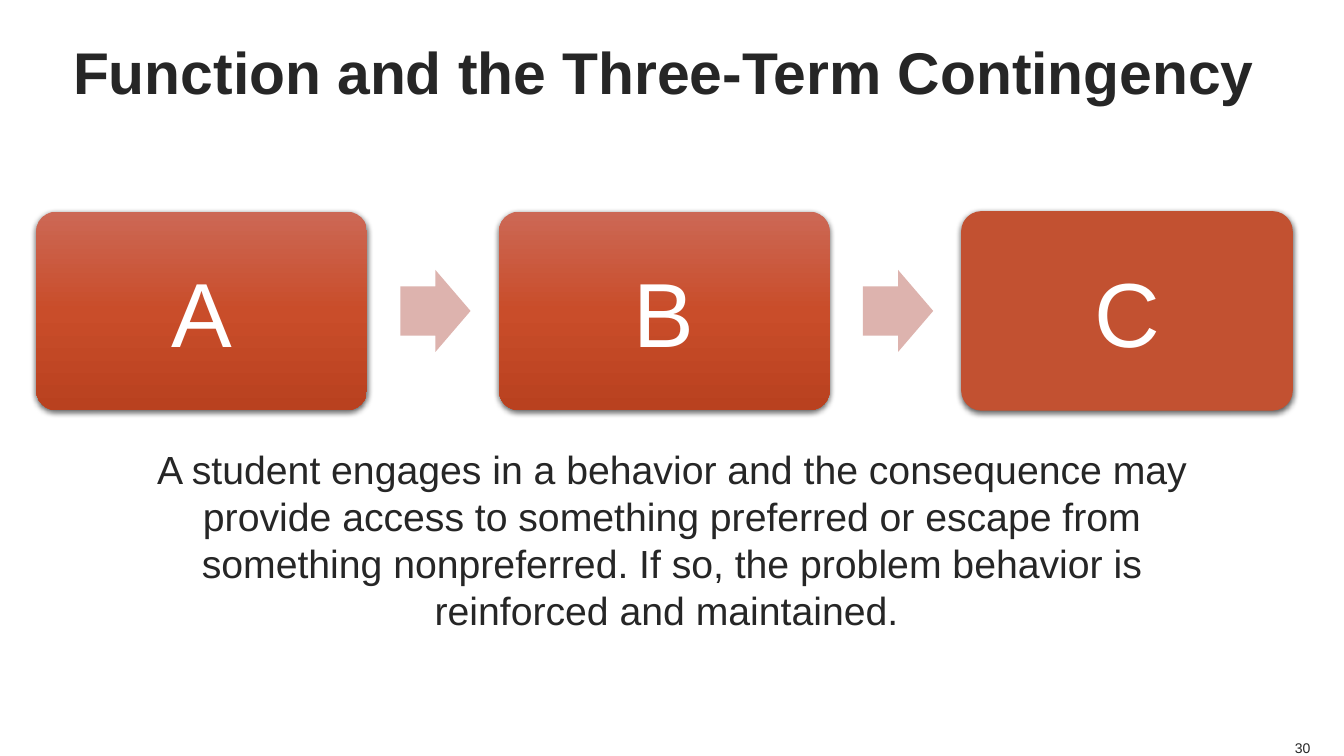
from copy import deepcopy
from dataclasses import dataclass

from lxml.etree import SubElement
from pptx import Presentation
from pptx.dml.color import RGBColor
from pptx.enum.shapes import MSO_SHAPE
from pptx.enum.text import MSO_ANCHOR, MSO_AUTO_SIZE, PP_ALIGN
from pptx.oxml.ns import qn
from pptx.util import Pt


@dataclass(frozen=True)
class Theme:
    font: str = "Arial"
    ink: str = "262626"
    white: str = "FFFFFF"
    arrow: str = "DDB3AE"
    solid: str = "C25131"
    gradient: tuple = ("CC6855", "C94D2A", "B9411F")
    title: int = 42
    letter: int = 65
    body: int = 28
    number: int = 10


theme = Theme()


def set_text(s, text, size, color, align=PP_ALIGN.CENTER, anchor=MSO_ANCHOR.MIDDLE, inset=None):
    tf = s.text_frame
    tf.word_wrap = True
    tf.auto_size = MSO_AUTO_SIZE.NONE
    tf.vertical_anchor = anchor
    if inset is not None:
        tf.margin_left = tf.margin_right = tf.margin_top = tf.margin_bottom = Pt(inset)
    p = tf.paragraphs[0]
    p.text = text
    p.alignment = align
    p.font.name = theme.font
    p.font.size = Pt(size)
    p.font.color.rgb = RGBColor.from_string(color)
    return p


def add_shadow(s):
    s.shadow.inherit = False
    effects = s._element.spPr.find(qn("a:effectLst"))
    outer = SubElement(effects, qn("a:outerShdw"), blurRad=str(Pt(4.5)), dist=str(Pt(1.5)),
                       dir="5400000", rotWithShape="0")
    black = SubElement(outer, qn("a:srgbClr"), val="000000")
    SubElement(black, qn("a:alpha"), val="63000")


prs = Presentation()
prs.slide_width, prs.slide_height = Pt(960), Pt(540)
slide = prs.slides.add_slide(prs.slide_layouts[5])

# Title
title = slide.shapes.title
title.left, title.top, title.width, title.height = Pt(0), Pt(0), Pt(960), Pt(100.8)
p = set_text(title, "Function and the Three-Term Contingency ", theme.title, theme.ink, inset=0)
p.font.bold = True

# A-B-C boxes, with an arrow after each but the last
letters = "ABC"
left, top, width, height, pitch = 25.9, 151.2, 236.2, 141.8, 330.5
for i, letter in enumerate(letters):
    x = left + i * pitch
    is_last = i == len(letters) - 1
    box = slide.shapes.add_shape(MSO_SHAPE.ROUNDED_RECTANGLE, Pt(x), Pt(top), Pt(width), Pt(height))
    box.adjustments[0] = 0.1
    add_shadow(box)
    set_text(box, letter, theme.letter, theme.white, inset=20)
    if is_last:
        box.fill.solid()
        box.fill.fore_color.rgb = RGBColor.from_string(theme.solid)
        box.line.color.rgb = RGBColor.from_string(theme.solid)
        box.line.width = Pt(0.75)
        continue

    # Three-stop gradient, running downwards
    box.line.fill.background()
    box.fill.gradient()
    box.fill.gradient_angle = 270
    first_stop = box._element.spPr.find(".//" + qn("a:gs"))
    first_stop.addnext(deepcopy(first_stop))
    for stop, color, position in zip(box.fill.gradient_stops, theme.gradient, (0, 0.5, 1)):
        stop.color.rgb = RGBColor.from_string(color)
        stop.position = position

    arrow = slide.shapes.add_shape(MSO_SHAPE.RIGHT_ARROW, Pt(x + 260), Pt(192.8), Pt(50.2), Pt(58.6))
    arrow.adjustments[0], arrow.adjustments[1] = 0.6, 0.5
    arrow.shadow.inherit = False
    arrow.fill.solid()
    arrow.fill.fore_color.rgb = RGBColor.from_string(theme.arrow)
    arrow.line.fill.background()

# Explanation
body = slide.shapes.add_textbox(Pt(87.1), Pt(314.6), Pt(785.5), Pt(143.3))
set_text(body, "A student engages in a behavior and the consequence may provide access to something "
         "preferred or escape from something nonpreferred. If so, the problem behavior is "
         "reinforced and maintained. ", theme.body, theme.ink, anchor=MSO_ANCHOR.TOP)

# Slide number
number = slide.shapes.add_textbox(Pt(923.8), Pt(527.8), Pt(12.2), Pt(12.2))
set_text(number, "30", theme.number, theme.ink, PP_ALIGN.RIGHT, MSO_ANCHOR.BOTTOM, 0)
number.text_frame.word_wrap = False

prs.save("out.pptx")
